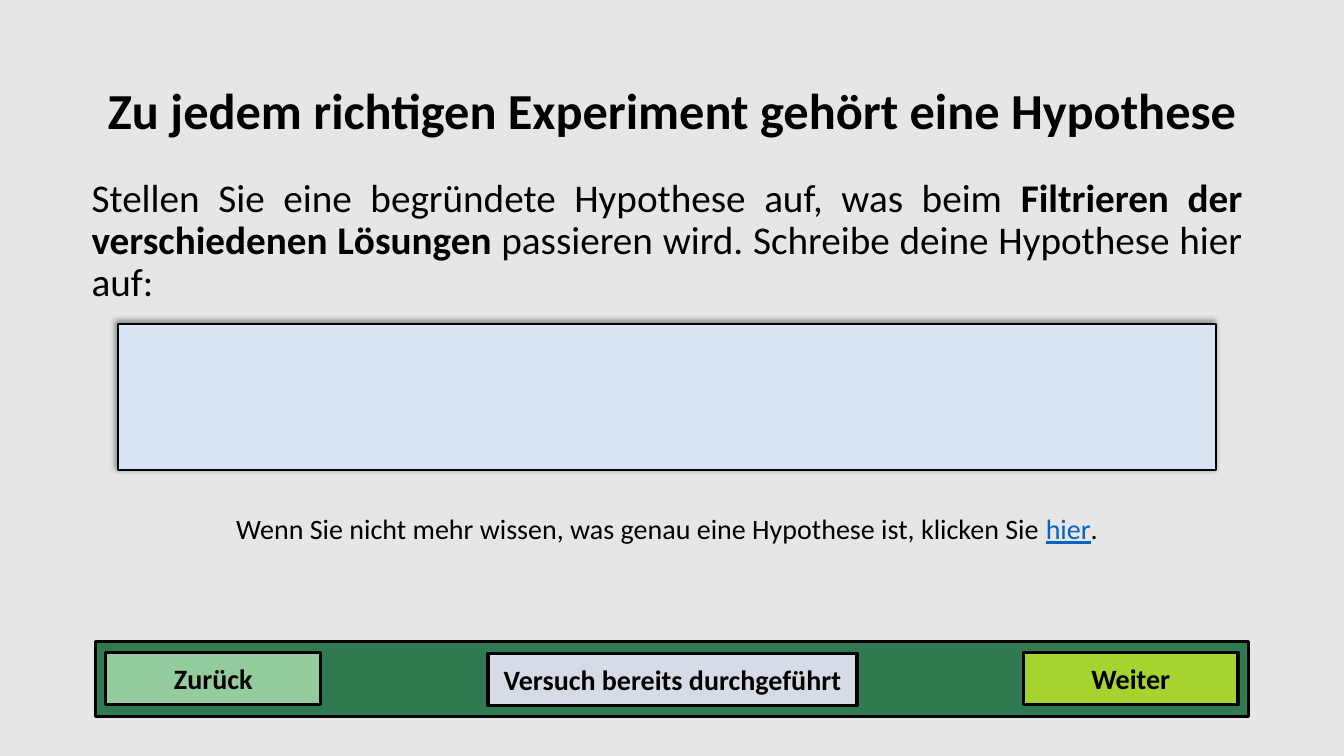
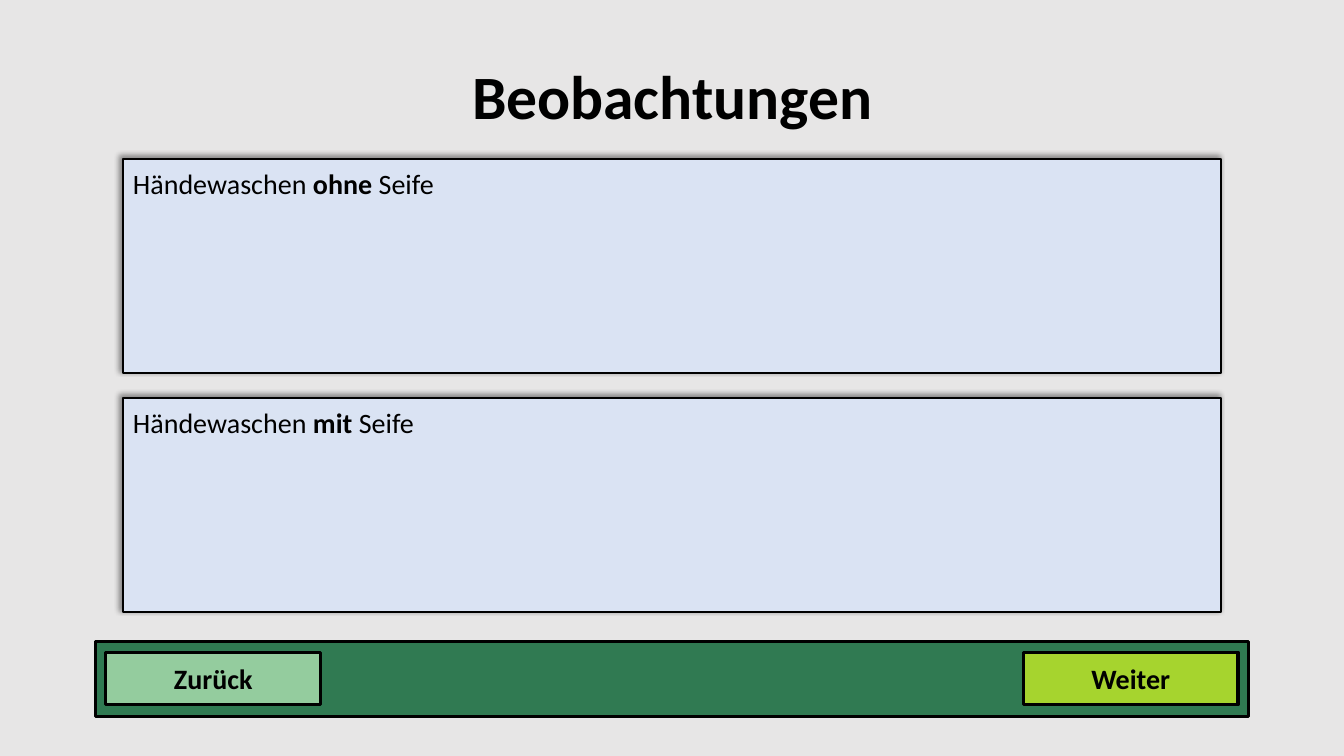
"""Build two lesson slides on hypotheses and observations."""
from dataclasses import dataclass, field
from typing import Any

from lxml import etree
from pptx import Presentation
from pptx import util as u
from pptx.dml import color
from pptx.enum import shapes, text
from pptx.oxml import ns

FONT = "Calibri"
BLACK = "000000"
BACKGROUND = "E7E6E6"
ANSWER_FILL = "DAE3F3"
BAR_FILL = "307A52"
BACK_FILL = "94CC9E"
NEXT_FILL = "A6D42E"
DONE_FILL = "D6DCE5"
LINK = "0563C1"

CENTER = {"alignment": text.PP_ALIGN.CENTER}
TIGHT_CENTER = {"alignment": text.PP_ALIGN.CENTER, "line_spacing": 0.9}
TIGHT_JUSTIFY = {"alignment": text.PP_ALIGN.JUSTIFY, "line_spacing": 0.9}
LEFT = {"alignment": text.PP_ALIGN.LEFT}
MIDDLE = {"word_wrap": True, "vertical_anchor": text.MSO_ANCHOR.MIDDLE}
TOP = {"word_wrap": True, "vertical_anchor": text.MSO_ANCHOR.TOP}
BELOW_EDGE = {**TOP, "margin_top": u.Inches(0.07)}
BOLD = {"bold": True}


@dataclass(frozen=True)
class Box:
    """Position and size in inches."""
    left: float
    top: float
    width: float
    height: float

    def lengths(self) -> list[u.Length]:
        """Return the four lengths in drawing order."""
        return [u.Inches(value) for value in (self.left, self.top, self.width, self.height)]


@dataclass(frozen=True)
class Run:
    """A piece of text with its own font format."""
    words: str
    format: dict[str, Any] = field(default_factory=dict)
    colour: str = BLACK


@dataclass(frozen=True)
class Button:
    """A labelled button of the navigation bar."""
    label: str
    box: Box
    fill: str


BAR = Box(0.95, 6.36, 11.43, 0.75)
BACK = Button("Zurück", Box(1.05, 6.47, 2.13, 0.52), BACK_FILL)
NEXT = Button("Weiter", Box(10.15, 6.47, 2.13, 0.52), NEXT_FILL)
DONE = Button("Versuch bereits durchgeführt", Box(4.84, 6.48, 3.66, 0.52), DONE_FILL)


def rgb(value: str) -> color.RGBColor:
    """Turn a hex string into a colour."""
    return color.RGBColor.from_string(value)


def apply(target: Any, values: dict[str, Any]) -> None:
    """Set every format value on the target."""
    for name, value in values.items():
        setattr(target, name, value)


def write(shape: Any, runs: list[Run], size: float, paragraph_format: dict[str, Any],
          frame_format: dict[str, Any]) -> None:
    """Fill a shape with one paragraph of runs."""
    apply(shape.text_frame, frame_format)
    paragraph = shape.text_frame.paragraphs[0]
    apply(paragraph, paragraph_format)
    for item in runs:
        run = paragraph.add_run()
        run.text = item.words
        apply(run.font, {"name": FONT, "size": u.Pt(size), **item.format})
        run.font.color.rgb = rgb(item.colour)


def add_text(slide: Any, box: Box, runs: list[Run], size: float,
             paragraph_format: dict[str, Any], frame_format: dict[str, Any]) -> None:
    """Add a text box."""
    write(slide.shapes.add_textbox(*box.lengths()), runs, size, paragraph_format, frame_format)


def add_rectangle(slide: Any, box: Box, fill: str, line_width: float) -> Any:
    """Add a filled rectangle with a black outline."""
    shape = slide.shapes.add_shape(shapes.MSO_SHAPE.RECTANGLE, *box.lengths())
    shape.shadow.inherit = False
    shape.fill.solid()
    shape.fill.fore_color.rgb = rgb(fill)
    shape.line.color.rgb = rgb(BLACK)
    shape.line.width = u.Pt(line_width)
    return shape


def add_shadow(shape: Any) -> None:
    """Give a shape a soft shadow towards the top left."""
    effects = shape.fill._xPr.find(ns.qn("a:effectLst"))
    shadow = etree.SubElement(effects, ns.qn("a:outerShdw"), {
        "blurRad": str(u.Pt(4)), "dist": str(u.Pt(3)), "dir": str(225 * 60000),
        "algn": "br", "rotWithShape": "0"})
    tint = etree.SubElement(shadow, ns.qn("a:srgbClr"), {"val": BLACK})
    etree.SubElement(tint, ns.qn("a:alpha"), {"val": "40000"})


def add_answer_field(slide: Any, box: Box, runs: list[Run]) -> None:
    """Add a shadowed field for answers with an optional caption."""
    shape = add_rectangle(slide, box, ANSWER_FILL, 1.5)
    add_shadow(shape)
    write(shape, runs, 20, LEFT, BELOW_EDGE)


def add_navigation(slide: Any, buttons: list[Button]) -> None:
    """Add the bar at the bottom with its buttons."""
    add_rectangle(slide, BAR, BAR_FILL, 2.25)
    for button in buttons:
        shape = add_rectangle(slide, button.box, button.fill, 2.25)
        write(shape, [Run(button.label, BOLD)], 20, CENTER, MIDDLE)


def add_slide(presentation: Any, title: str, title_top: float, title_size: float,
              buttons: list[Button]) -> Any:
    """Add a blank slide with background, title and navigation."""
    slide = presentation.slides.add_slide(presentation.slide_layouts[6])
    slide.background.fill.solid()
    slide.background.fill.fore_color.rgb = rgb(BACKGROUND)
    add_text(slide, Box(0.92, title_top, 11.5, 1.45), [Run(title, BOLD)], title_size,
             TIGHT_CENTER, MIDDLE)
    add_navigation(slide, buttons)
    return slide


def build_hypothesis(presentation: Any) -> None:
    """Build the slide that asks for a hypothesis."""
    slide = add_slide(presentation, "Zu jedem richtigen Experiment gehört eine Hypothese",
                      0.4, 36, [BACK, NEXT, DONE])
    add_text(slide, Box(0.81, 1.72, 11.61, 1.4), [
        Run("Stellen Sie eine begründete Hypothese auf, was beim "),
        Run("Filtrieren der verschiedenen Lösungen ", BOLD),
        Run("passieren wird. Schreibe deine Hypothese hier auf:"),
    ], 28, TIGHT_JUSTIFY, TOP)
    add_answer_field(slide, Box(1.17, 3.21, 10.89, 1.45), [])
    add_text(slide, Box(0.81, 5, 11.61, 0.53), [
        Run("Wenn Sie nicht mehr wissen, was genau eine Hypothese ist, klicken Sie "),
        Run("hier", {"underline": True}, LINK),
        Run("."),
    ], 20, TIGHT_CENTER, MIDDLE)


def build_observations(presentation: Any) -> None:
    """Build the slide with two fields for observations."""
    slide = add_slide(presentation, "Beobachtungen", 0.26, 44, [BACK, NEXT])
    for row, condition in enumerate(("ohne", "mit")):
        add_answer_field(slide, Box(1.22, 1.58 + row * 2.37, 10.89, 2.12), [
            Run("Händewaschen "), Run(condition, BOLD), Run(" Seife")])


def main() -> None:
    """Build and save the presentation."""
    presentation = Presentation()
    apply(presentation, {"slide_width": u.Inches(13.33), "slide_height": u.Inches(7.5)})
    build_hypothesis(presentation)
    build_observations(presentation)
    presentation.save("out.pptx")


if __name__ == "__main__":
    main()
